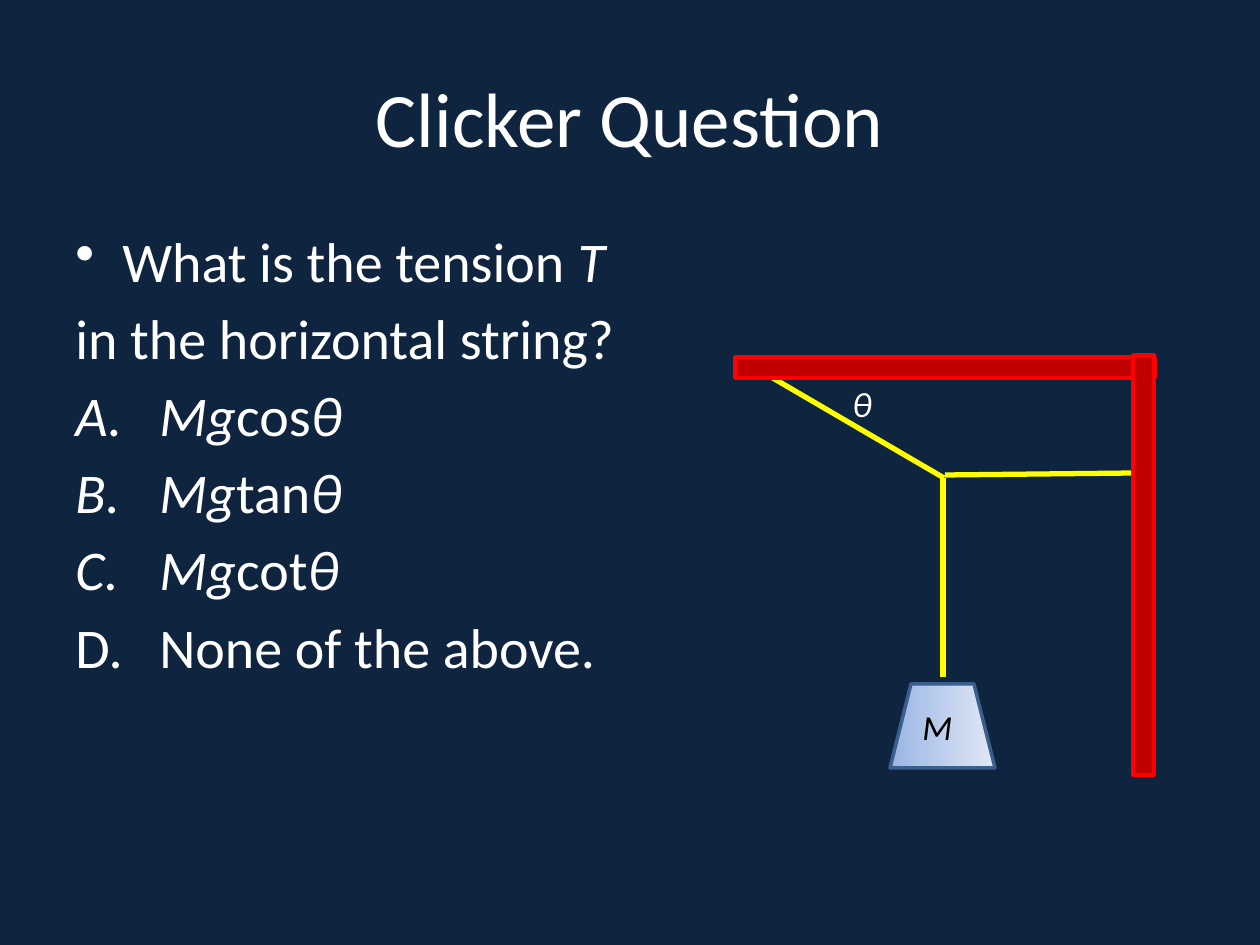
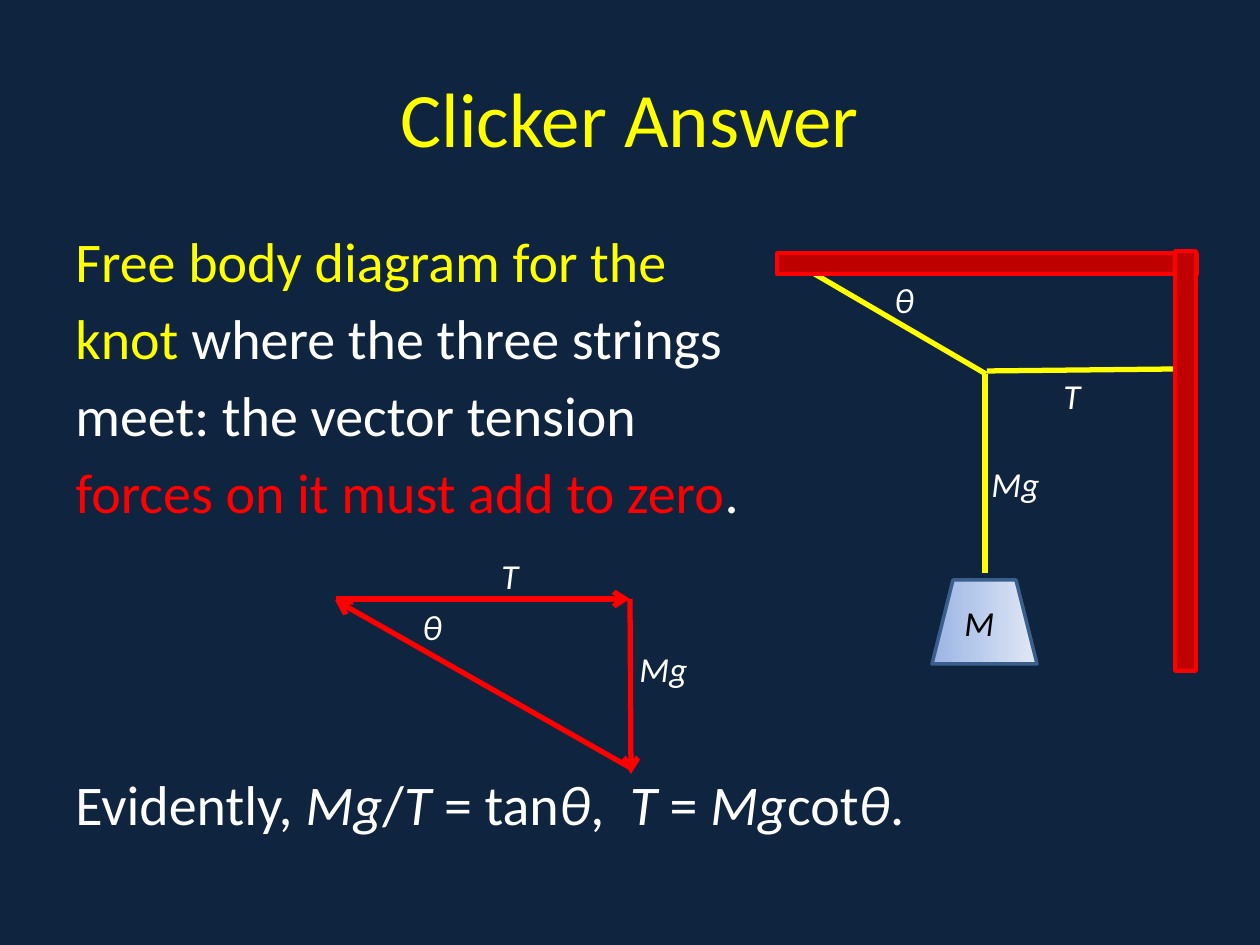
from lxml.etree import SubElement
from pptx import Presentation
from pptx.dml.color import RGBColor
from pptx.enum.shapes import MSO_CONNECTOR, MSO_SHAPE
from pptx.enum.text import MSO_ANCHOR, PP_ALIGN
from pptx.oxml.ns import qn
from pptx.util import Pt

EMU_PER_PX = 914400 / 126
NAVY, WHITE, BLACK = "0F243E", "FFFFFF", "000000"
YELLOW, RED, DARK_RED = "FFFF00", "FF0000", "C00000"
STEEL, PALE_BLUE, PALEST_BLUE = "3A5F8C", "9AB5E4", "E1E8F5"
LINE_GAP = 5.7      # points before each body line
LINE_PITCH = 44.75  # points from one body line to the next


def px(n):
    return round(n * EMU_PER_PX)


def rgb(hex_colour):
    return RGBColor.from_string(hex_colour)


class Deck:
    font = "Calibri"

    def __init__(self):
        self.prs = Presentation()
        self.prs.slide_width, self.prs.slide_height = px(1260), px(945)
        fill = self.prs.slide_master.background.fill
        fill.solid()
        fill.fore_color.rgb = rgb(NAVY)

    def slide(self, title, colour):
        self.s = self.prs.slides.add_slide(self.prs.slide_layouts[5])
        sp = self.s.shapes.title
        sp.left, sp.top, sp.width, sp.height = px(63), px(38), px(1134), px(157)
        tf = sp.text_frame
        tf.vertical_anchor = MSO_ANCHOR.MIDDLE
        tf.text = title
        tf.paragraphs[0].alignment = PP_ALIGN.CENTER
        self.style(tf.paragraphs[0].runs[0], 44, colour)

    def style(self, r, size, colour, italic=False):
        f = r.font
        f.name, f.size, f.italic = self.font, Pt(size), italic
        f.color.rgb = rgb(colour)

    def runs(self, p, text, size, colour):
        """Add text to a paragraph; parts between asterisks are italic."""
        for i, part in enumerate(text.split("*")):
            if part:
                r = p.add_run()
                r.text = part
                self.style(r, size, colour, i % 2 == 1)

    def text_box(self, x, y, w, h):
        tf = self.s.shapes.add_textbox(px(x), px(y), px(w), px(h)).text_frame
        tf.word_wrap = True
        return tf

    def label(self, text, x, y, w=63, colour=WHITE):
        tf = self.text_box(x, y, w, 55)
        self.runs(tf.paragraphs[0], f"*{text}*", 20, colour)

    def body(self):
        self.tf = self.text_box(63, 220, 1134, 672)
        self.is_first_line = True

    def line(self, *parts, skip=0, bullet=None, indent=0):
        """Add a body line of (text, colour) parts, after skip empty line heights."""
        p = self.tf.paragraphs[0] if self.is_first_line else self.tf.add_paragraph()
        self.is_first_line = False
        p.space_before = Pt(LINE_GAP + skip * LINE_PITCH)
        if bullet:
            pPr = p._p.get_or_add_pPr()
            pPr.set("marL", str(px(indent)))
            pPr.set("indent", str(-px(indent)))
            tag, attribute, value = bullet
            SubElement(pPr, qn(tag)).set(attribute, value)
        for text, colour in parts:
            self.runs(p, text, 32, colour)

    def shape(self, kind, x, y, w, h, line):
        sp = self.s.shapes.add_shape(kind, px(x), px(y), px(w), px(h))
        sp.shadow.inherit = False
        sp.line.color.rgb = rgb(line)
        sp.line.width = Pt(2)
        return sp

    def bar(self, x, y, w, h):
        fill = self.shape(MSO_SHAPE.RECTANGLE, x, y, w, h, RED).fill
        fill.solid()
        fill.fore_color.rgb = rgb(DARK_RED)

    def weight(self, x, y):
        sp = self.shape(MSO_SHAPE.FLOWCHART_MANUAL_OPERATION, x, y, 105, 84, STEEL)
        sp._element.spPr.xfrm.set("flipV", "1")
        sp.fill.gradient()
        sp.fill.gradient_angle = 0
        for stop, colour in zip(sp.fill.gradient_stops, (PALE_BLUE, PALEST_BLUE)):
            stop.color.rgb = rgb(colour)

    def stroke(self, x1, y1, x2, y2, colour, arrow=False):
        c = self.s.shapes.add_connector(MSO_CONNECTOR.STRAIGHT, px(x1), px(y1), px(x2), px(y2))
        c.line.color.rgb = rgb(colour)
        c.line.width = Pt(3)
        if arrow:
            SubElement(c.line._get_or_add_ln(), qn("a:tailEnd")).set("type", "arrow")
        SubElement(c._element.spPr, qn("a:effectLst"))

    def hanging_mass(self, x, y):
        """Draw the frame, strings and mass, with the beam's corner at x, y."""
        self.stroke(x + 209, y + 121, x + 36, y + 20, YELLOW)
        self.bar(x, y, 420, 21)
        self.stroke(x + 208, y + 121, x + 208, y + 320, YELLOW)
        self.stroke(x + 210, y + 118, x + 399, y + 116, YELLOW)
        self.weight(x + 155, y + 327)
        self.bar(x + 398, y - 2, 21, 420)
        self.label("M", x + 175, y + 342, 73, BLACK)
        self.label("θ", x + 105, y + 19)


def question(deck):
    deck.slide("Clicker Question", WHITE)
    deck.body()
    deck.line(("What is the tension *T*", WHITE), bullet=("a:buChar", "char", "•"), indent=47)
    deck.line(("in the horizontal string?", WHITE))
    for choice in ("*Mg*cos*θ*", "*Mg*tan*θ*", "*Mg*cot*θ*", "None of the above."):
        deck.line((choice, WHITE), bullet=("a:buAutoNum", "type", "alphaUcPeriod"), indent=84)
    deck.hanging_mass(735, 357)


def answer(deck):
    deck.slide("Clicker Answer", YELLOW)
    deck.body()
    deck.line(("Free body diagram for the", YELLOW))
    deck.line(("knot", YELLOW), (" where the three strings", WHITE))
    deck.line(("meet: the vector tension", WHITE))
    deck.line(("forces on it must add to zero", RED), (".", WHITE))
    deck.line(("Evidently, *Mg*/*T* = tan*θ*,  *T* = *Mg*cot*θ*.", WHITE), skip=3)

    for force in ((629, 767, 335, 600), (630, 599, 631, 774), (336, 599, 630, 599)):
        deck.stroke(*force, RED, arrow=True)
    deck.label("θ", 410, 599)
    deck.label("T", 489, 548)
    deck.label("Mg", 627, 641, 95)

    deck.hanging_mass(777, 253)
    deck.label("T", 1051, 368)
    deck.label("Mg", 979, 456, 95)


def main():
    deck = Deck()
    question(deck)
    answer(deck)
    deck.prs.save("out.pptx")


if __name__ == "__main__":
    main()
